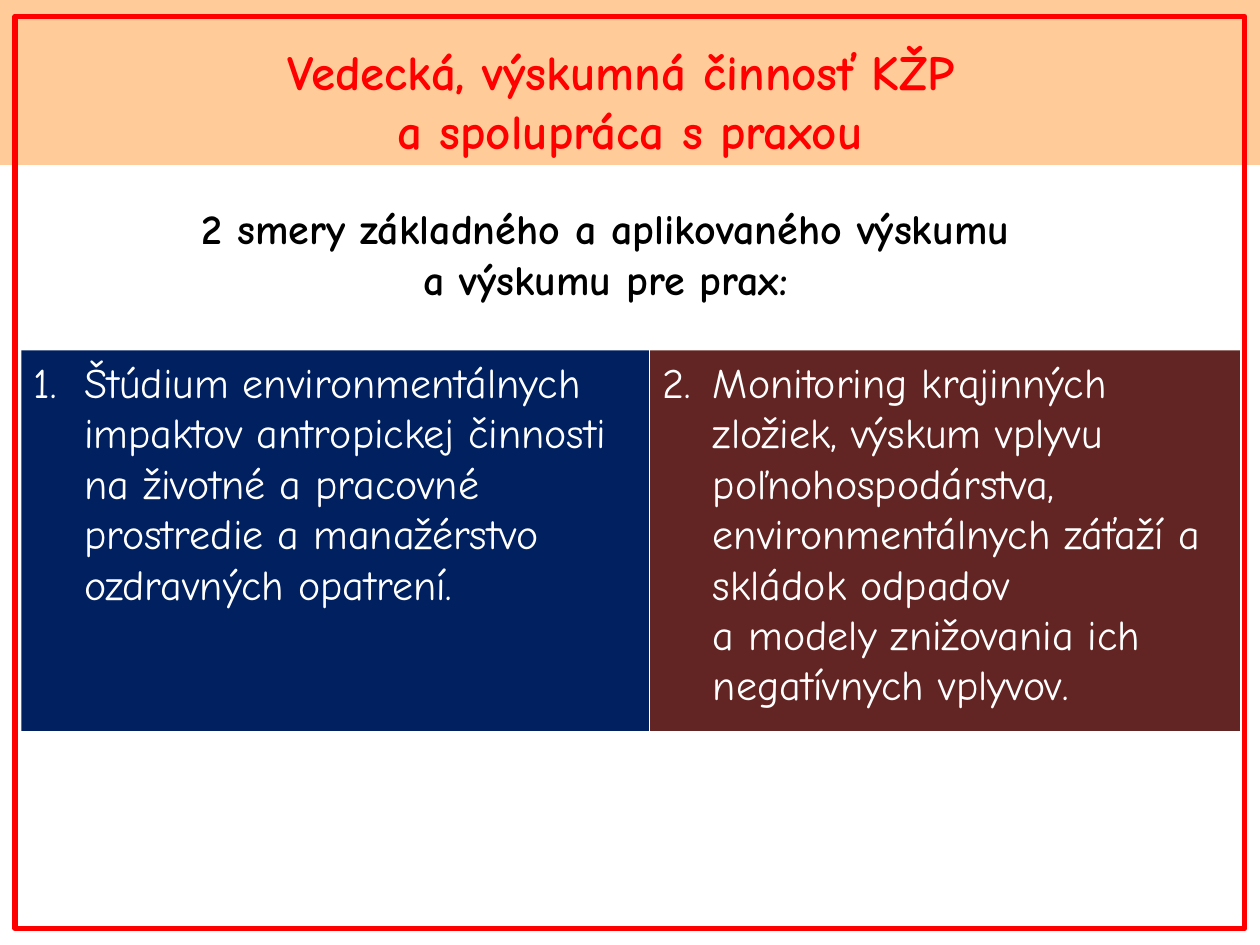
from pptx import Presentation
from pptx import util as u
from pptx.dml.color import RGBColor
from pptx.enum import shapes, text

FONT = "Comic Neue"


def color(hex_code):
    return RGBColor.from_string(hex_code)


def write(shape, words, size, ink, bold=False, align=text.PP_ALIGN.CENTER,
          anchor=text.MSO_ANCHOR.TOP, before=4.8):
    """Fill a shape with one styled paragraph and return that paragraph."""
    frame = shape.text_frame
    frame.word_wrap = True
    frame.vertical_anchor = anchor
    paragraph = frame.paragraphs[0]
    paragraph.text = words
    paragraph.alignment = align
    paragraph.space_before = u.Pt(before)
    paragraph.font.name = FONT
    paragraph.font.size = u.Pt(size)
    paragraph.font.bold = bold
    paragraph.font.color.rgb = color(ink)
    return paragraph


deck = Presentation()
deck.slide_width, deck.slide_height = u.Inches(10), u.Inches(7.5)
slide = deck.slides.add_slide(deck.slide_layouts[6])

intro = slide.shapes.add_textbox(
    u.Inches(0.12), u.Inches(1.56), u.Inches(9.49), u.Inches(0.97))
write(intro, "2 smery základného a aplikovaného výskumu \na výskumu pre prax: ",
      24, "000000", bold=True)

header = slide.shapes.add_shape(
    shapes.MSO_SHAPE.RECTANGLE, 0, 0, u.Inches(10), u.Inches(1.31))
header.shadow.inherit = False
header.fill.solid()
header.fill.fore_color.rgb = color("FFCC99")
header.line.fill.background()
write(header, "Vedecká, výskumná činnosť KŽP \na spolupráca s praxou",
      28, "FF0000", bold=True, anchor=text.MSO_ANCHOR.BOTTOM, before=6)

border = slide.shapes.add_shape(
    shapes.MSO_SHAPE.RECTANGLE,
    u.Inches(0.12), u.Inches(0.13), u.Inches(9.76), u.Inches(7.24))
border.shadow.inherit = False
border.fill.background()
border.line.color.rgb = color("FF0000")
border.line.width = u.Pt(3)

directions = [
    (0.17, 4.98, "002060",
     "1.\tŠtúdium environmentálnych impaktov antropickej činnosti na životné "
     "a pracovné prostredie a manažérstvo ozdravných opatrení."),
    (5.16, 4.68, "632523",
     "2.\tMonitoring krajinných zložiek, výskum vplyvu poľnohospodárstva, "
     "environmentálnych záťaží a skládok odpadov \n"
     "a modely znižovania ich negatívnych vplyvov."),
]
for left, width, background, words in directions:
    panel = slide.shapes.add_shape(
        shapes.MSO_SHAPE.RECTANGLE,
        u.Inches(left), u.Inches(2.78), u.Inches(width), u.Inches(3.02))
    panel.shadow.inherit = False
    panel.fill.solid()
    panel.fill.fore_color.rgb = color(background)
    panel.line.fill.background()
    item = write(panel, words, 24, "FFFFFF", align=text.PP_ALIGN.LEFT)
    # Hanging indent keeps wrapped lines clear of the number
    indent = item._p.get_or_add_pPr()
    indent.set("marL", str(u.Inches(0.4)))
    indent.set("indent", str(-u.Inches(0.4)))

deck.save("out.pptx")
